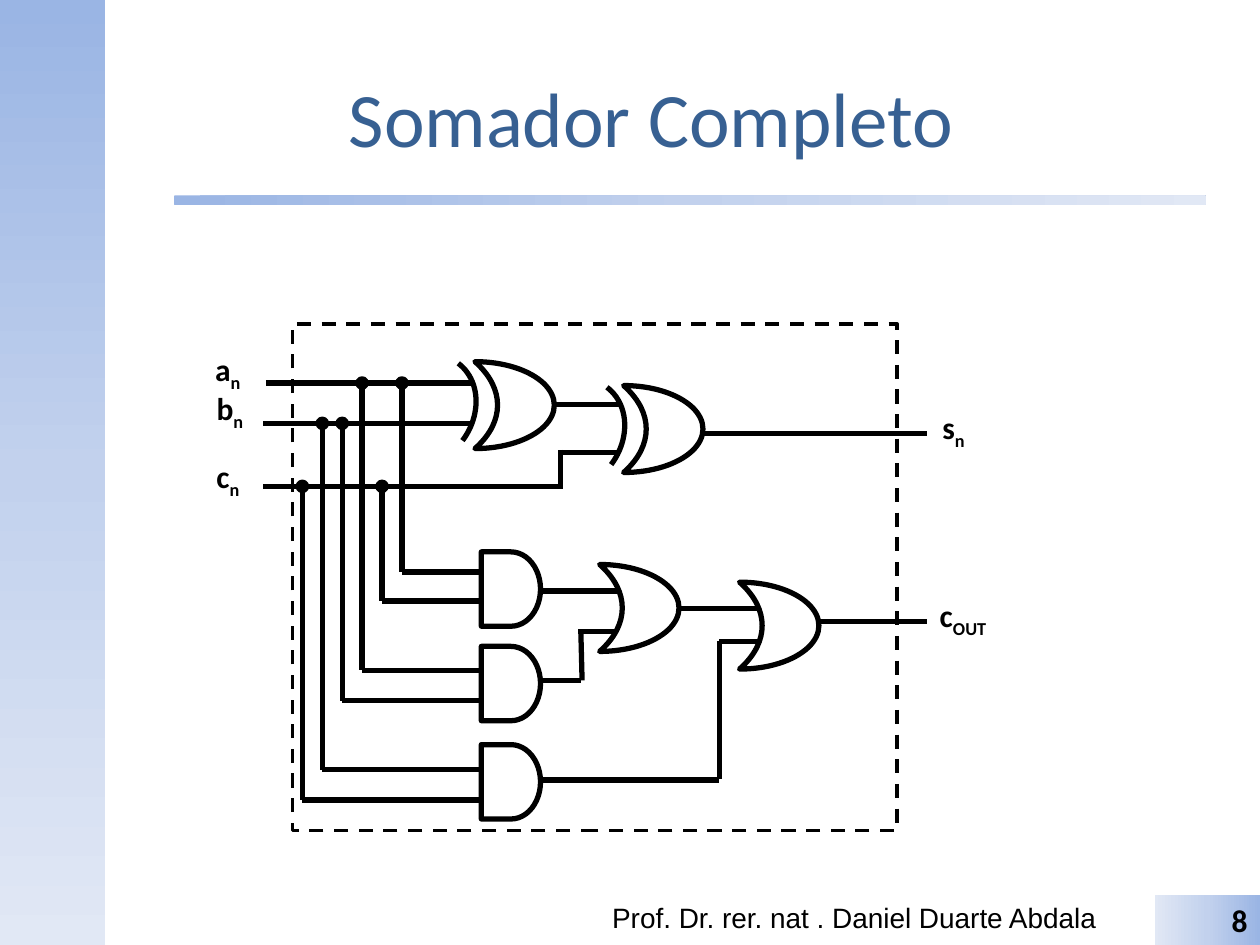
from copy import deepcopy
from pptx import Presentation
from pptx.dml.color import RGBColor
from pptx.enum.dml import MSO_LINE as Dash
from pptx.enum.shapes import MSO_CONNECTOR as Link, MSO_SHAPE as Form
from pptx.enum.text import MSO_ANCHOR as Anchor, MSO_AUTO_SIZE as Fit, PP_ALIGN as Align
from pptx.util import Inches, Pt
from lxml.etree import SubElement
from pptx.oxml.ns import qn

BLACK = RGBColor(0x00, 0x00, 0x00)
NAVY = RGBColor(0x37, 0x60, 0x92)
FADE = [(0, RGBColor(0x9A, 0xB5, 0xE4)), (0.5, RGBColor(0xC2, 0xD1, 0xED)),
        (1, RGBColor(0xE1, 0xE8, 0xF5))]

WIDE, HIGH = 10, 7.5
SIDE = WIDE / 12
FOOT = 7.1
TITLE = "Somador Completo"
AUTHOR = "Prof. Dr. rer. nat . Daniel Duarte Abdala"
PAGE = "8"

BARS = [(Form.RECTANGLE, (0, 0, SIDE, HIGH), 270),
        (Form.ROUNDED_RECTANGLE, (1.38, 1.55, 8.19, 0.08), 0),
        (Form.RECTANGLE, (WIDE - SIDE, FOOT, SIDE, HIGH - FOOT), 180)]
FRAME = (2.32, 2.57, 4.8, 4.02)

LABELS = [("a", "n", 1.61, 2.73, 0.46, Align.LEFT),
          ("b", "n", 1.61, 3.04, 0.43, Align.CENTER),
          ("c", "n", 1.61, 3.58, 0.4, Align.CENTER),
          ("s", "n", 7.38, 3.19, 0.45, Align.LEFT),
          ("c", "OUT", 7.36, 4.68, 0.62, Align.LEFT)]

AND_X, AND_W, AND_H = 3.82, 0.47, 0.59
AND_END = AND_X + AND_W
AND_TOPS = [4.38, 5.13, 5.91]
OR_W, OR_H = 0.63, 0.69
OR_GATES = [(3.77, 2.87), (4.95, 3.06), (4.76, 4.48), (5.87, 4.62)]
ARCS = [(2.96, 2.79), (4.14, 2.98)]

ROWS = {"a": 3.04, "b": 3.36, "c": 3.86}
TAP_X, TAP_GAP, DOT = 2.4, 0.158, 0.08
TAPS = [("c", 6.35), ("b", 6.11), ("b", 5.56),
        ("a", 5.32), ("c", 4.77), ("a", 4.54)]
OUT_X = 7.36
WIRES = [(2.11, ROWS["a"], 3.74, ROWS["a"]),
         (2.09, ROWS["b"], 3.73, ROWS["b"]),
         (2.09, ROWS["c"], 4.45, ROWS["c"]),
         (4.45, 3.57, 4.45, 3.88),
         (4.45, 3.59, 4.92, 3.59),
         (4.4, 3.21, 4.92, 3.21),
         (5.58, 3.44, OUT_X, 3.44),
         (AND_END, 4.69, 4.92, 4.69),
         (AND_END, 5.4, 4.61, 5.4),
         (4.61, 5.01, 4.62, 5.4),
         (4.59, 5.01, 4.9, 5.01),
         (5.4, 4.83, 6.03, 4.83),
         (AND_END, 6.19, 5.71, 6.19),
         (5.71, 5.09, 5.71, 6.18),
         (5.71, 5.09, 6.02, 5.09),
         (6.5, 4.93, OUT_X, 4.93)]


def box(*sizes):
    return [Inches(size) for size in sizes]


def write(par, text, size, face, color=BLACK, bold=False):
    run = par.add_run()
    run.text = text
    font = run.font
    font.size, font.name, font.bold = Pt(size), face, bold
    font.color.rgb = color
    return run


def fade(shape, angle):
    fill = shape.fill
    fill.gradient()
    fill.gradient_angle = angle
    first = fill.gradient_stops[0]._gs
    first.addnext(deepcopy(first))
    for stop, (place, color) in zip(fill.gradient_stops, FADE):
        stop.position = place
        stop.color.rgb = color


def draw(home, form, place, width=3):
    shape = home.add_shape(form, *box(*place))
    shape.shadow.inherit = False
    shape.fill.background()
    shape.line.color.rgb = BLACK
    shape.line.width = Pt(width)
    return shape


def wire(home, ends):
    line = home.add_connector(Link.STRAIGHT, *box(*ends))
    line.line.color.rgb = BLACK
    line.line.width = Pt(3)
    SubElement(line._element.spPr, qn("a:effectLst"))


def label(home, name, sub, left, top, width, align):
    frame = home.add_textbox(*box(left, top, width, 0.4)).text_frame
    frame.word_wrap = False
    frame.auto_size = Fit.SHAPE_TO_FIT_TEXT
    par = frame.paragraphs[0]
    par.alignment = align
    write(par, name, 18, "Calibri", bold=True)
    low = write(par, sub, 18, "Calibri", bold=True)
    low.font._element.set("baseline", "-25000")


def circuit(home):
    for top in AND_TOPS:
        draw(home, Form.FLOWCHART_DELAY, (AND_X, top, AND_W, AND_H))
    for left, top in OR_GATES:
        gate = draw(home, Form.MOON, (left, top, OR_W, OR_H))
        gate.adjustments[0] = 0.715
        gate._element.spPr.xfrm.set("flipH", "1")
    for left, top in ARCS:
        draw(home, Form.ARC, (left, top, 0.79, 0.94)).rotation = 36.9
    for ends in WIRES:
        wire(home, ends)
    for col, (name, end) in enumerate(TAPS):
        x, y = TAP_X + col * TAP_GAP, ROWS[name]
        wire(home, (x, y, x, end))
        wire(home, (x, end, AND_X, end))
        dot = draw(home, Form.OVAL, (x - DOT / 2, y - DOT / 2, DOT, DOT), 2)
        dot.fill.solid()
        dot.fill.fore_color.rgb = BLACK
    for item in LABELS:
        label(home, *item)


def main():
    deck = Presentation()
    deck.slide_width, deck.slide_height = box(WIDE, HIGH)
    slide = deck.slides.add_slide(deck.slide_layouts[5])
    shapes = slide.shapes

    title = shapes.title
    title.left, title.top, title.width, title.height = box(SIDE, 0.3, 8.67, 1.25)
    title.text_frame.vertical_anchor = Anchor.MIDDLE
    par = title.text_frame.paragraphs[0]
    par.alignment = Align.CENTER
    write(par, TITLE, 44, "Calibri", NAVY)

    for form, place, angle in BARS:
        bar = draw(shapes, form, place)
        bar.line.fill.background()
        fade(bar, angle)
    bar.text_frame.vertical_anchor = Anchor.MIDDLE
    par = bar.text_frame.paragraphs[0]
    par.alignment = Align.RIGHT
    write(par, PAGE, 18, "Calibri", bold=True)

    foot = shapes.add_textbox(*box(4.76, FOOT, 4.19, HIGH - FOOT)).text_frame
    foot.word_wrap = True
    write(foot.paragraphs[0], AUTHOR, 16, "Arial")

    draw(shapes, Form.RECTANGLE, FRAME, 2).line.dash_style = Dash.DASH
    circuit(shapes.add_group_shape().shapes)
    deck.save("out.pptx")


if __name__ == "__main__":
    main()
